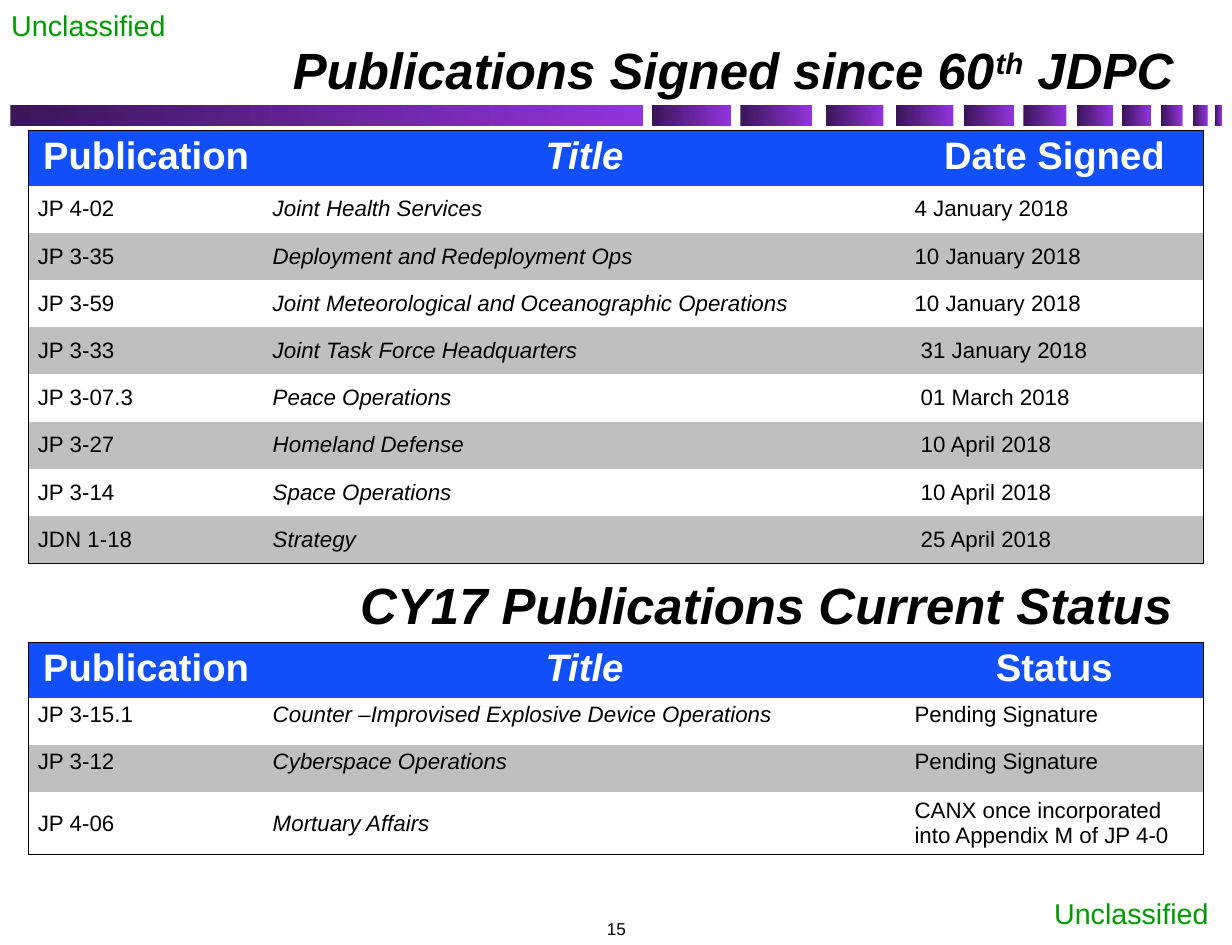
from lxml.etree import SubElement
from pptx import Presentation
from pptx.dml.color import RGBColor
from pptx.enum.shapes import MSO_SHAPE
from pptx.enum.text import MSO_ANCHOR, PP_ALIGN
from pptx.oxml.ns import qn
from pptx.util import Emu, Inches, Pt

BLACK = RGBColor(0x00, 0x00, 0x00)
WHITE = RGBColor(0xFF, 0xFF, 0xFF)
GRAY = RGBColor(0xBF, 0xBF, 0xBF)
BLUE = RGBColor(0x11, 0x4F, 0xFB)
GREEN = RGBColor(0x00, 0x99, 0x00)
DARK_PURPLE = RGBColor(0x3A, 0x15, 0x58)
PURPLE = RGBColor(0x92, 0x34, 0xDB)

GRID_COLS, GRID_ROWS = 43, 33
TABLE_LEFT, TABLE_COLS = 1, (8.2, 22.4, 10.4)
HEADER_ROW, BODY_ROW = 1.8, 1.65
BAR_LEFTS = (0.36, 22.76, 25.84, 28.84, 31.28, 33.64, 35.72, 37.6, 39.16, 40.52, 41.64, 42.4)
BAR_WIDTHS = [22.08] + [n / 4 for n in (11, 10, 8, 8, 7, 6, 5, 4, 3, 2, 1)]

SIGNED = [
    ("Publication", "Title", "Date Signed"),
    ("JP 4-02", "Joint Health Services", "4 January 2018"),
    ("JP 3-35", "Deployment and Redeployment Ops", "10 January 2018"),
    ("JP 3-59", "Joint Meteorological and Oceanographic Operations", "10 January 2018"),
    ("JP 3-33", "Joint Task Force Headquarters", " 31 January 2018"),
    ("JP 3-07.3", "Peace Operations", " 01 March 2018"),
    ("JP 3-27", "Homeland Defense", " 10 April 2018"),
    ("JP 3-14", "Space Operations", " 10 April 2018"),
    ("JDN 1-18", "Strategy", " 25 April 2018"),
]
STATUS = [
    ("Publication", "Title", "Status"),
    ("JP 3-15.1", "Counter –Improvised Explosive Device Operations", "Pending Signature"),
    ("JP 3-12", "Cyberspace Operations", "Pending Signature"),
    ("JP 4-06", "Mortuary Affairs", "CANX once incorporated into Appendix M of JP 4-0"),
]


class GridSlide:
    """Draws styled elements on a slide, with lengths in grid columns and rows."""

    def __init__(self, prs, font):
        self.slide = prs.slides.add_slide(prs.slide_layouts[6])
        self.font = font
        self.col = prs.slide_width / GRID_COLS
        self.row = prs.slide_height / GRID_ROWS

    def x(self, cols):
        return Emu(round(cols * self.col))

    def y(self, rows):
        return Emu(round(rows * self.row))

    def box(self, left, top, width, height):
        return self.x(left), self.y(top), self.x(width), self.y(height)

    def style(self, r, size, color, bold=False, italic=False):
        r.font.name = self.font
        r.font.size = Pt(size)
        r.font.color.rgb = color
        r.font.bold = bold
        r.font.italic = italic

    def bar(self, left, top, width, height):
        sp = self.slide.shapes.add_shape(MSO_SHAPE.RECTANGLE, *self.box(left, top, width, height))
        sp.shadow.inherit = False
        sp.line.fill.background()
        sp.fill.gradient()
        sp.fill.gradient_angle = 0
        for stop, color in zip(sp.fill.gradient_stops, (DARK_PURPLE, PURPLE)):
            stop.color.rgb = color

    def text(self, box, parts, size, color, align=PP_ALIGN.LEFT, anchor=MSO_ANCHOR.TOP,
             inset=0.4, wrap=False, strong=False):
        tf = self.slide.shapes.add_textbox(*self.box(*box)).text_frame
        tf.word_wrap = wrap
        tf.vertical_anchor = anchor
        tf.margin_left = tf.margin_right = self.x(inset)
        tf.margin_top = tf.margin_bottom = self.y(0.2)
        p = tf.paragraphs[0]
        p.alignment = align
        for part in parts:
            r = p.add_run()
            r.text = part
            self.style(r, size, color, strong, strong)
        return p

    def heading(self, top, *parts):
        return self.text((6.48, top, 34.68, 2.52), parts, 32, BLACK, PP_ALIGN.RIGHT,
                         MSO_ANCHOR.BOTTOM, inset=0.2, wrap=True, strong=True)

    def marking(self, left, top):
        self.text((left, top, 6.24, 1.6), ["Unclassified"], 18, GREEN)

    def borders(self, cell, sides):
        tcPr = cell._tc.get_or_add_tcPr()
        for side in "LRTB":
            ln = SubElement(tcPr, qn("a:ln" + side), w=str(Pt(1)))
            if side in sides:
                fill = SubElement(ln, qn("a:solidFill"))
                SubElement(fill, qn("a:srgbClr"), val=str(BLACK))
            else:
                SubElement(ln, qn("a:noFill"))

    def cell(self, cell, text, header, shade, italic, anchor):
        cell.fill.solid()
        cell.fill.fore_color.rgb = shade
        cell.vertical_anchor = anchor
        cell.margin_left = cell.margin_right = self.x(0.32)
        cell.margin_top = cell.margin_bottom = self.y(0.16)
        cell.text_frame.text = text
        p = cell.text_frame.paragraphs[0]
        p.alignment = PP_ALIGN.CENTER if header else PP_ALIGN.LEFT
        size, color = (24, WHITE) if header else (14, BLACK)
        self.style(p.runs[0], size, color, header, italic)

    def table(self, top, rows, heights, top_rows):
        last_row, last_col = len(rows) - 1, len(TABLE_COLS) - 1
        box = self.box(TABLE_LEFT, top, sum(TABLE_COLS), sum(heights))
        table = self.slide.shapes.add_table(len(rows), len(TABLE_COLS), *box).table
        table.first_row = table.horz_banding = False
        for column, width in zip(table.columns, TABLE_COLS):
            column.width = self.x(width)
        for i, (values, height) in enumerate(zip(rows, heights)):
            table.rows[i].height = self.y(height)
            shade = BLUE if i == 0 else WHITE if i % 2 else GRAY
            anchor = MSO_ANCHOR.TOP if i in top_rows else MSO_ANCHOR.MIDDLE
            for j, value in enumerate(values):
                edges = {"L": j == 0, "R": j == last_col, "T": i == 0, "B": i == last_row}
                cell = table.cell(i, j)
                self.borders(cell, [side for side, outer in edges.items() if outer])
                self.cell(cell, value, i == 0, shade, j == 1, anchor)


def main():
    prs = Presentation()
    prs.slide_width, prs.slide_height = Inches(10.75), Inches(8.25)
    s = GridSlide(prs, "Arial")

    for left, width in zip(BAR_LEFTS, BAR_WIDTHS):
        s.bar(left, 3.68, width, 0.72)
    s.marking(0, 0.08)
    s.marking(36.4, 31.08)
    s.text((17.04, 30.8, 8.96, 2.2), ["15"], 10.8, BLACK, PP_ALIGN.CENTER, MSO_ANCHOR.BOTTOM)

    title = s.heading(1.16, "Publications Signed since 60", "th", " JDPC")
    title.runs[1].font._element.set("baseline", "30000")
    s.table(4.56, SIGNED, [HEADER_ROW] + [BODY_ROW] * 8, top_rows=(0,))

    s.heading(19.84, "CY17 Publications Current Status")
    s.table(22.44, STATUS, [HEADER_ROW, BODY_ROW, BODY_ROW, 2.08], top_rows=(0, 1, 2))
    prs.save("out.pptx")


if __name__ == "__main__":
    main()
